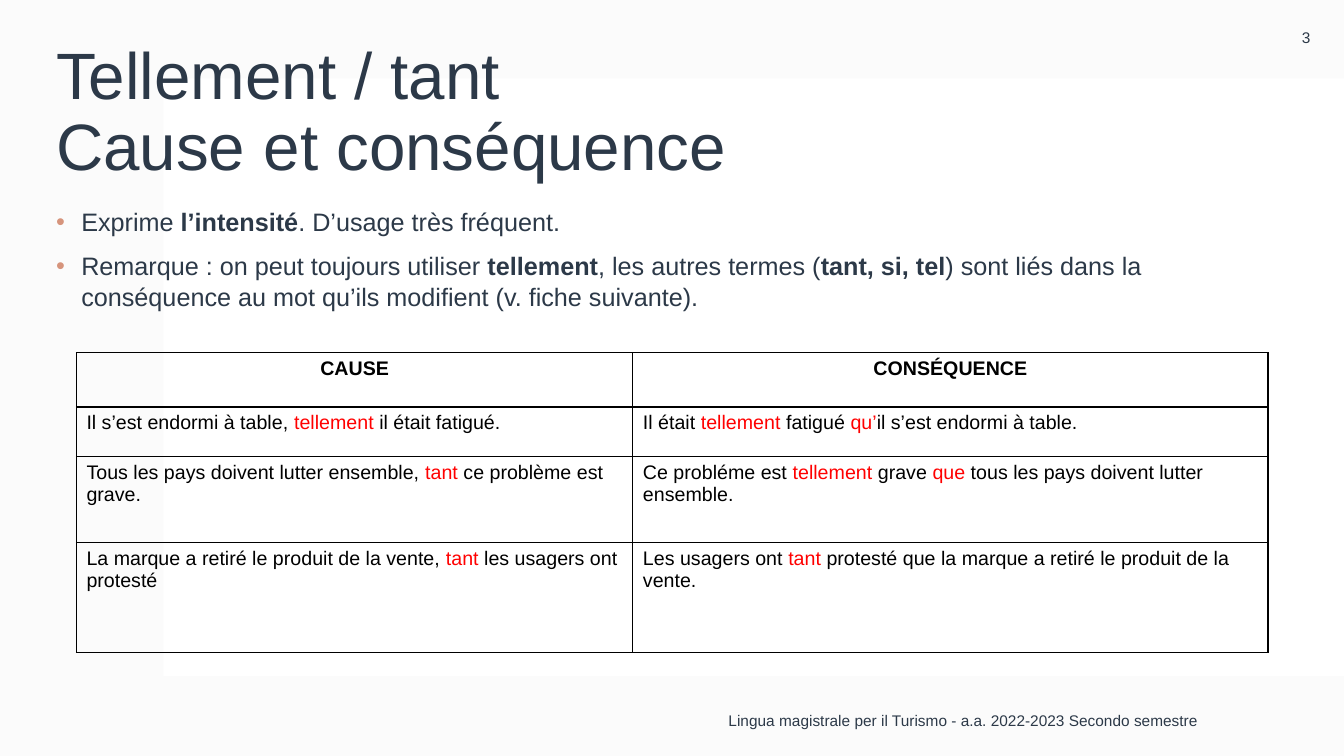
"""Build a French grammar slide on tellement and tant, with a table of examples."""
from lxml import etree
from pptx import Presentation
from pptx.dml.color import RGBColor
from pptx.enum.shapes import MSO_SHAPE
from pptx.enum.text import MSO_ANCHOR, PP_ALIGN
from pptx.oxml.ns import qn
from pptx.util import Inches, Pt

RECTANGLE = MSO_SHAPE.RECTANGLE
TOP, MIDDLE = MSO_ANCHOR.TOP, MSO_ANCHOR.MIDDLE
LEFT, CENTER, RIGHT = PP_ALIGN.LEFT, PP_ALIGN.CENTER, PP_ALIGN.RIGHT

COLUMNS, ROWS = 32, 18
UNIT = Inches(7.5) // ROWS
FONT = "Arial"
NAVY = RGBColor(0x2C, 0x39, 0x48)
BLACK = RGBColor(0, 0, 0)
RED = RGBColor(0xFF, 0, 0)
WHITE = RGBColor(0xFF, 0xFF, 0xFF)
MIST = RGBColor(0xF4, 0xF4, 0xF4)
CORAL = RGBColor(0xD6, 0x94, 0x7C)

POINTS = [
    "Exprime *l’intensité*. D’usage très fréquent.",
    "Remarque : on peut toujours utiliser *tellement*, les autres termes (*tant, si, tel*)"
    " sont liés dans la conséquence au mot qu’ils modifient (v. fiche suivante).",
]
EXAMPLES = [
    ("CAUSE", "CONSÉQUENCE"),
    ("Il s’est endormi à table, *tellement* il était fatigué.",
     "Il était *tellement* fatigué *qu’*il s’est endormi à table."),
    ("Tous les pays doivent lutter ensemble, *tant* ce problème est grave.",
     "Ce probléme est *tellement* grave *que* tous les pays doivent lutter ensemble."),
    ("La marque a retiré le produit de la vente, *tant* les usagers ont protesté",
     "Les usagers ont *tant* protesté que la marque a retiré le produit de la vente."),
]
EXAMPLE_COLUMNS = (13.25, 15.12)
EXAMPLE_ROWS = (1.29, 1.18, 2.04, 2.62)


def grid(*cells):
    """Turn grid columns or rows into lengths."""
    return [round(cell * UNIT) for cell in cells]


def add_panel(slide, area, color, opacity=100):
    """Draw a plain background rectangle."""
    panel = slide.shapes.add_shape(RECTANGLE, *grid(*area))
    panel.shadow.inherit = False
    panel.fill.solid()
    panel.fill.fore_color.rgb = color
    panel.line.fill.background()
    if opacity < 100:
        tint = next(panel.fill._xPr.iter(qn("a:srgbClr")))
        etree.SubElement(tint, qn("a:alpha"), val=str(opacity * 1000))


def style(paragraph, size, color, align=LEFT):
    """Set the font and alignment of a paragraph."""
    paragraph.alignment = align
    paragraph.font.name = FONT
    paragraph.font.size = Pt(size)
    paragraph.font.color.rgb = color


def write_marked(paragraph, text, emphasise):
    """Write text, applying emphasise to the parts between asterisks."""
    for index, part in enumerate(text.split("*")):
        if part:
            run = paragraph.add_run()
            run.text = part
            if index % 2:
                emphasise(run.font)


def make_bold(font):
    """Embolden a font."""
    font.bold = True


def make_red(font):
    """Colour a font red."""
    font.color.rgb = RED


def add_frame(slide, area, anchor):
    """Add a wrapping text box and return its text frame."""
    frame = slide.shapes.add_textbox(*grid(*area)).text_frame
    frame.word_wrap = True
    frame.vertical_anchor = anchor
    return frame


def add_label(slide, area, text, size, align=LEFT, spacing=1.0):
    """Add vertically centred text in one style."""
    paragraph = add_frame(slide, area, MIDDLE).paragraphs[0]
    paragraph.text = text
    paragraph.line_spacing = spacing
    style(paragraph, size, NAVY, align)


def add_points(slide, area, points):
    """Add a bulleted list."""
    frame = add_frame(slide, area, TOP)
    for index, point in enumerate(points):
        paragraph = frame.add_paragraph() if index else frame.paragraphs[0]
        paragraph.space_before = Pt(10)
        style(paragraph, 18, NAVY)
        write_marked(paragraph, point, make_bold)
        properties = paragraph._p.get_or_add_pPr()
        properties.set("marL", str(Inches(0.25)))
        properties.set("indent", str(-Inches(0.25)))
        bullet_color = etree.Element(qn("a:buClr"))
        etree.SubElement(bullet_color, qn("a:srgbClr"), val=str(CORAL))
        bullet_font = etree.Element(qn("a:buFont"), typeface=FONT)
        bullet = etree.Element(qn("a:buChar"), char="•")
        spacing = properties.find(qn("a:spcBef"))
        for item in (bullet, bullet_font, bullet_color):
            spacing.addnext(item)


def add_borders(cell):
    """Give a cell thin black borders."""
    properties = cell._tc.get_or_add_tcPr()
    for index, side in enumerate(("lnL", "lnR", "lnT", "lnB")):
        border = etree.Element(qn(f"a:{side}"), w=str(Pt(1)))
        fill = etree.SubElement(border, qn("a:solidFill"))
        etree.SubElement(fill, qn("a:srgbClr"), val=str(BLACK))
        properties.insert(index, border)


def add_examples(slide, left, top):
    """Add the table that pairs causes with consequences."""
    area = grid(left, top, sum(EXAMPLE_COLUMNS), sum(EXAMPLE_ROWS))
    table = slide.shapes.add_table(len(EXAMPLES), len(EXAMPLE_COLUMNS), *area).table
    table.first_row = table.horz_banding = False
    for column, width in zip(table.columns, grid(*EXAMPLE_COLUMNS)):
        column.width = width
    for row, height, sentences in zip(table.rows, grid(*EXAMPLE_ROWS), EXAMPLES):
        row.height = height
        heading = sentences == EXAMPLES[0]
        for cell, sentence in zip(row.cells, sentences):
            cell.fill.background()
            add_borders(cell)
            paragraph = cell.text_frame.paragraphs[0]
            style(paragraph, 14, BLACK, CENTER if heading else LEFT)
            paragraph.font.bold = heading
            write_marked(paragraph, sentence, make_red)


def main():
    """Build and save the slide."""
    deck = Presentation()
    deck.slide_width, deck.slide_height = grid(COLUMNS, ROWS)
    slide = deck.slides.add_slide(deck.slide_layouts[6])
    add_panel(slide, (0, 0, COLUMNS, ROWS), MIST, opacity=35)
    add_panel(slide, (3.89, 1.87, COLUMNS - 3.89, 14.23), WHITE)
    add_label(slide, (1.1, 0.96, 27.67, 3.48),
              "Tellement / tant\vCause et conséquence", 46.8, spacing=0.9)
    add_points(slide, (1.1, 4.8, 27.67, 11.04), POINTS)
    add_examples(slide, 1.82, 8.4)
    add_label(slide, (9.89, 16.32, 18.88, 1.68),
              "Lingua magistrale per il Turismo - a.a. 2022-2023 Secondo semestre", 11, RIGHT)
    add_label(slide, (30.2, 0, 1.8, 1.8), "3", 11, CENTER)
    deck.save("out.pptx")


if __name__ == "__main__":
    main()
